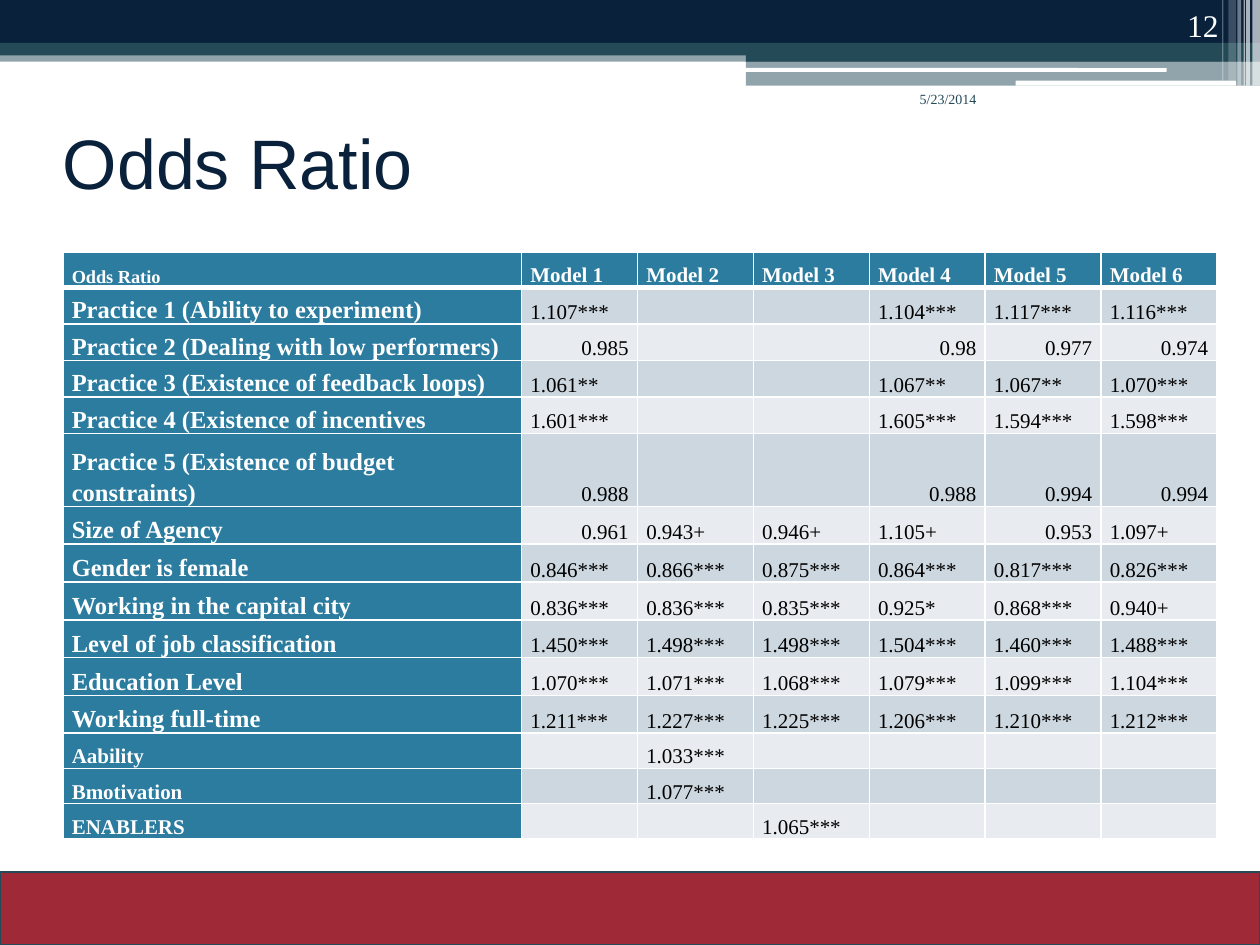
from lxml.etree import SubElement
from pptx import Presentation
from pptx.dml.color import RGBColor
from pptx.enum.shapes import MSO_SHAPE as Shape
from pptx.enum.text import MSO_ANCHOR as Anchor, PP_ALIGN as Align
from pptx.oxml.ns import qn
from pptx.util import Inches, Pt

NAVY, TEAL, WHITE, BLACK = "09213B", "244A58", "FFFFFF", "000000"
RED, BLUE, DARK_BAND, LIGHT_BAND = "9F2936", "2C7C9F", "CDD7DF", "E8ECF0"
SERIF, SANS = "Times New Roman", "Arial"

BARS = [
    (0, 0.4, 10, 0.09, TEAL, 50),
    (0, 0, 10, 0.34, NAVY, 100),
    (0, 0.34, 10, 0.1, TEAL, 100),
    (5.92, 0.39, 4.08, 0.1, TEAL, 100),
    (5.92, 0.48, 4.08, 0.2, TEAL, 50),
]
ROUNDED_BARS = [(5.91, 0.54, 3.35, 0.03), (8.06, 0.64, 1.75, 0.04)]
STRIPES = [
    (9.94, 0.06, 0.68, 65),
    (9.89, 0.03, 0.68, 65),
    (9.87, 0.01, 0.68, 60),
    (9.82, 0.03, 0.68, 40),
    (9.75, 0.06, 0.64, 20),
    (9.7, 0.01, 0.64, 30),
]
HEADER = ["Odds Ratio"] + [f"Model {number}" for number in range(1, 7)]
ROWS = [
    ("Practice 1 (Ability to experiment)", "1.107***", "", "", "1.104***", "1.117***", "1.116***"),
    ("Practice 2 (Dealing with low performers)", "0.985", "", "", "0.98", "0.977", "0.974"),
    ("Practice 3 (Existence of feedback loops)", "1.061**", "", "", "1.067**", "1.067**", "1.070***"),
    ("Practice 4 (Existence of incentives", "1.601***", "", "", "1.605***", "1.594***", "1.598***"),
    ("Practice 5 (Existence of budget constraints)", "0.988", "", "", "0.988", "0.994", "0.994"),
    ("Size of Agency", "0.961", "0.943+", "0.946+", "1.105+", "0.953", "1.097+"),
    ("Gender is female", "0.846***", "0.866***", "0.875***", "0.864***", "0.817***", "0.826***"),
    ("Working in the capital city", "0.836***", "0.836***", "0.835***", "0.925*", "0.868***", "0.940+"),
    ("Level of job classification", "1.450***", "1.498***", "1.498***", "1.504***", "1.460***", "1.488***"),
    ("Education Level", "1.070***", "1.071***", "1.068***", "1.079***", "1.099***", "1.104***"),
    ("Working full-time", "1.211***", "1.227***", "1.225***", "1.206***", "1.210***", "1.212***"),
    ("Aability", "", "1.033***", "", "", "", ""),
    ("Bmotivation", "", "1.077***", "", "", "", ""),
    ("ENABLERS", "", "", "1.065***", "", "", ""),
]
COLUMN_WIDTHS = [3.64] + [0.92] * 6
ROW_HEIGHTS = [0.28] + [0.29] * 4 + [0.58] + [0.3] * 6 + [0.28] * 3


def color(value):
    return RGBColor.from_string(value)


class SlideBuilder:
    def __init__(self, slide):
        self.slide = slide

    def style(self, paragraph, size, fill, name=SERIF, bold=False, align=Align.LEFT):
        paragraph.alignment = align
        font = paragraph.font
        font.size, font.name, font.bold = Pt(size), name, bold
        font.color.rgb = color(fill)

    def bar(self, left, top, width, height, fill, opacity=100, kind=Shape.RECTANGLE, line=None):
        shape = self.slide.shapes.add_shape(
            kind, Inches(left), Inches(top), Inches(width), Inches(height))
        shape.shadow.inherit = False
        shape.fill.solid()
        shape.fill.fore_color.rgb = color(fill)
        if opacity < 100:
            tint = shape.fill._xPr.find(".//" + qn("a:srgbClr"))
            SubElement(tint, qn("a:alpha"), val=str(opacity * 1000))
        if line:
            shape.line.color.rgb = color(line)
            shape.line.width = Pt(0.75)
        else:
            shape.line.fill.background()

    def text(self, content, left, top, width, height, size, fill, anchor=Anchor.TOP, **style):
        box = self.slide.shapes.add_textbox(
            Inches(left), Inches(top), Inches(width), Inches(height))
        frame = box.text_frame
        frame.word_wrap = True
        frame.vertical_anchor = anchor
        frame.text = content
        self.style(frame.paragraphs[0], size, fill, **style)

    def borders(self, cell, top, bottom):
        properties = cell._tc.get_or_add_tcPr()
        for side, width in (("L", 1), ("R", 1), ("T", top), ("B", bottom)):
            line = SubElement(properties, qn(f"a:ln{side}"), w=str(Pt(width)))
            SubElement(SubElement(line, qn("a:solidFill")), qn("a:srgbClr"), val=WHITE)

    def cell(self, cell, content, fill, size, ink, bold, align):
        cell.margin_left = cell.margin_right = Inches(0.07)
        cell.margin_top = cell.margin_bottom = 0
        cell.vertical_anchor = Anchor.BOTTOM
        cell.fill.solid()
        cell.fill.fore_color.rgb = color(fill)
        cell.text = content
        paragraph = cell.text_frame.paragraphs[0]
        paragraph.line_spacing = 1.15
        self.style(paragraph, size, ink, bold=bold, align=align)
        if not content:
            SubElement(paragraph._p, qn("a:endParaRPr"), sz=str(size * 100))

    def table(self, rows, left, top, widths, heights):
        table = self.slide.shapes.add_table(
            len(rows), len(widths), Inches(left), Inches(top),
            Inches(sum(widths)), Inches(sum(heights))).table
        for column, width in zip(table.columns, widths):
            column.width = Inches(width)
        for row, height in zip(table.rows, heights):
            row.height = Inches(height)
        for row_index, values in enumerate(rows):
            band = DARK_BAND if row_index % 2 else LIGHT_BAND
            for column_index, content in enumerate(values):
                heading = row_index == 0 or column_index == 0
                size = 12
                if column_index == 0:
                    size = 10.5 if row_index == 0 else 14 if row_index < 12 else 12
                plain_number = content.replace(".", "").isdigit()
                cell = table.cell(row_index, column_index)
                self.borders(cell, 3 if row_index == 1 else 1, 3 if row_index == 0 else 1)
                self.cell(cell, content, BLUE if heading else band, size,
                          WHITE if heading else BLACK, heading,
                          Align.RIGHT if plain_number else Align.LEFT)


def main():
    presentation = Presentation()
    presentation.slide_width, presentation.slide_height = Inches(10), Inches(7.5)
    builder = SlideBuilder(presentation.slides.add_slide(presentation.slide_layouts[6]))

    for bar in BARS:
        builder.bar(*bar)
    for bar in ROUNDED_BARS:
        builder.bar(*bar, WHITE, kind=Shape.ROUNDED_RECTANGLE)
    for left, width, height, opacity in STRIPES:
        builder.bar(left, 0, width, height, WHITE, opacity)
    builder.bar(0, 6.92, 10, 0.58, RED, line=TEAL)

    builder.text("Odds Ratio", 0.4, 0.7, 9, 1.17, 40, NAVY, Anchor.MIDDLE, name=SANS)
    builder.table([HEADER] + ROWS, 0.5, 2, COLUMN_WIDTHS, ROW_HEIGHTS)
    builder.text("5/23/2014", 7.2, 0.67, 1.05, 0.5, 8, TEAL)
    builder.text("12", 8.94, 0, 0.83, 0.4, 18, WHITE, Anchor.BOTTOM, align=Align.RIGHT)
    presentation.save("out.pptx")


if __name__ == "__main__":
    main()
